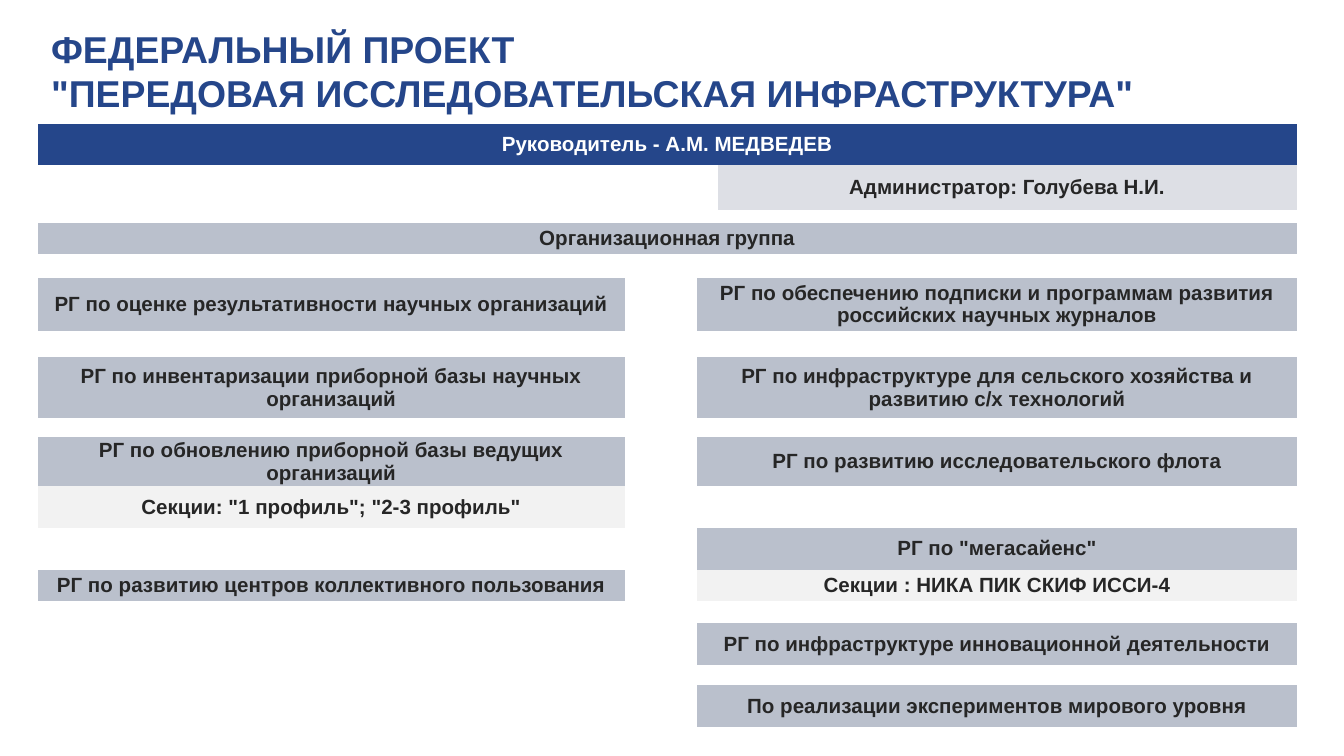
from dataclasses import dataclass

from lxml.etree import SubElement
from pptx import Presentation
from pptx.dml.color import RGBColor as RGB
from pptx.enum.text import MSO_ANCHOR as Anchor, MSO_AUTO_SIZE as Fit, PP_ALIGN as Align
from pptx.oxml.ns import qn
from pptx.util import Inches, Pt


@dataclass(frozen=True)
class Theme:
    font: str = "Arial"
    head: int = 20
    body: int = 11
    blank: int = 1
    navy: str = "25468A"
    white: str = "FFFFFF"
    ink: str = "262626"
    steel: str = "BAC0CC"
    mist: str = "DDDFE5"
    pale: str = "F2F2F2"
    plain: str = "{2D5ABB26-0587-4C30-8999-92F81FD0307C}"  # table style without grid


T = Theme()

TITLE = ["ФЕДЕРАЛЬНЫЙ ПРОЕКТ", '"ПЕРЕДОВАЯ ИССЛЕДОВАТЕЛЬСКАЯ ИНФРАСТРУКТУРА"']
COLS = [1.79, 2.46, 0.12, 0.54, 0.15, 2.12, 2.19]
ROWS = [0.31, 0.33, 0.1, 0.23, 0.18, 0.39, 0.2, 0.45, 0.14,
        0.37, 0.31, 0.31, 0.23, 0.17, 0.31, 0.15, 0.31]

# First and last column of each kind of bar
FULL, LEFT, RIGHT, ADMIN = (0, 6), (0, 2), (4, 6), (5, 6)

# Row, columns, fill, text
BARS = [
    (0, FULL, T.navy, "Руководитель - А.М. МЕДВЕДЕВ"),
    (1, ADMIN, T.mist, "Администратор: Голубева Н.И."),
    (3, FULL, T.steel, "Организационная группа"),
    (5, LEFT, T.steel, "РГ по оценке результативности научных организаций"),
    (7, LEFT, T.steel, "РГ по инвентаризации приборной базы научных организаций"),
    (9, LEFT, T.steel, "РГ по обновлению приборной базы ведущих организаций"),
    (10, LEFT, T.pale, 'Секции: "1 профиль"; "2-3 профиль"'),
    (12, LEFT, T.steel, "РГ по развитию центров коллективного пользования"),
    (5, RIGHT, T.steel,
     "РГ по обеспечению подписки и программам развития российских научных журналов"),
    (7, RIGHT, T.steel,
     "РГ по инфраструктуре для сельского хозяйства и развитию с/х технологий"),
    (9, RIGHT, T.steel, "РГ по развитию исследовательского флота"),
    (11, RIGHT, T.steel, 'РГ по "мегасайенс"'),
    (12, RIGHT, T.pale, "Секции : НИКА ПИК СКИФ ИССИ-4"),
    (14, RIGHT, T.steel, "РГ по инфраструктуре инновационной деятельности"),
    (16, RIGHT, T.steel, "По реализации экспериментов мирового уровня"),
]

# Columns of the joined blank cells, and the rows that have them
GAPS = {
    FULL: [4],
    LEFT: [14],
    (2, 4): [1, 2],
    (1, 2): [6, 8, 11, 13, 15, 16],
    (4, 5): [6, 8, 10, 13, 15],
}


def style(para, size, color, align):
    para.alignment = align
    font = para.font
    font.name, font.size, font.bold = T.font, Pt(size), True
    font.color.rgb = RGB.from_string(color)


def add_title(slide):
    box = slide.shapes.title
    box.left, box.top, box.width, box.height = map(Inches, (0.28, 0.21, 9.29, 0.63))
    frame = box.text_frame
    frame.word_wrap, frame.auto_size = True, Fit.NONE
    frame.vertical_anchor = Anchor.MIDDLE
    frame.text = "\n".join(TITLE)
    for para in frame.paragraphs:
        style(para, T.head, T.navy, Align.LEFT)


def clear(cell):
    """Remove fill and insets, and keep the empty line from stretching its row."""
    cell.fill.background()
    cell.margin_left = cell.margin_right = cell.margin_top = cell.margin_bottom = 0
    para = cell.text_frame.paragraphs[0]
    SubElement(para._p, qn("a:endParaRPr"), sz=str(T.blank * 100))


def join(table, row, span):
    first, last = span
    cell = table.cell(row, first)
    cell.merge(table.cell(row, last))
    return cell


def add_bar(table, row, span, fill, text):
    cell = join(table, row, span)
    cell.fill.solid()
    cell.fill.fore_color.rgb = RGB.from_string(fill)
    cell.vertical_anchor = Anchor.MIDDLE
    cell.text = text
    color = T.white if fill == T.navy else T.ink
    style(cell.text_frame.paragraphs[0], T.body, color, Align.CENTER)


def add_grid(slide):
    place = map(Inches, (0.28, 0.92, sum(COLS), sum(ROWS)))
    table = slide.shapes.add_table(len(ROWS), len(COLS), *place).table
    table.first_row = table.horz_banding = False
    table._tbl.tblPr.find(qn("a:tableStyleId")).text = T.plain
    for col, width in zip(table.columns, COLS):
        col.width = Inches(width)
    for row, height in zip(table.rows, ROWS):
        row.height = Inches(height)
    for cell in table.iter_cells():
        clear(cell)
    for bar in BARS:
        add_bar(table, *bar)
    for span, rows in GAPS.items():
        for row in rows:
            join(table, row, span)


def main():
    deck = Presentation()
    deck.slide_width = Inches(10)
    deck.slide_height = deck.slide_width * 9 // 16
    slide = deck.slides.add_slide(deck.slide_layouts[5])
    add_title(slide)
    add_grid(slide)
    deck.save("out.pptx")


if __name__ == "__main__":
    main()
